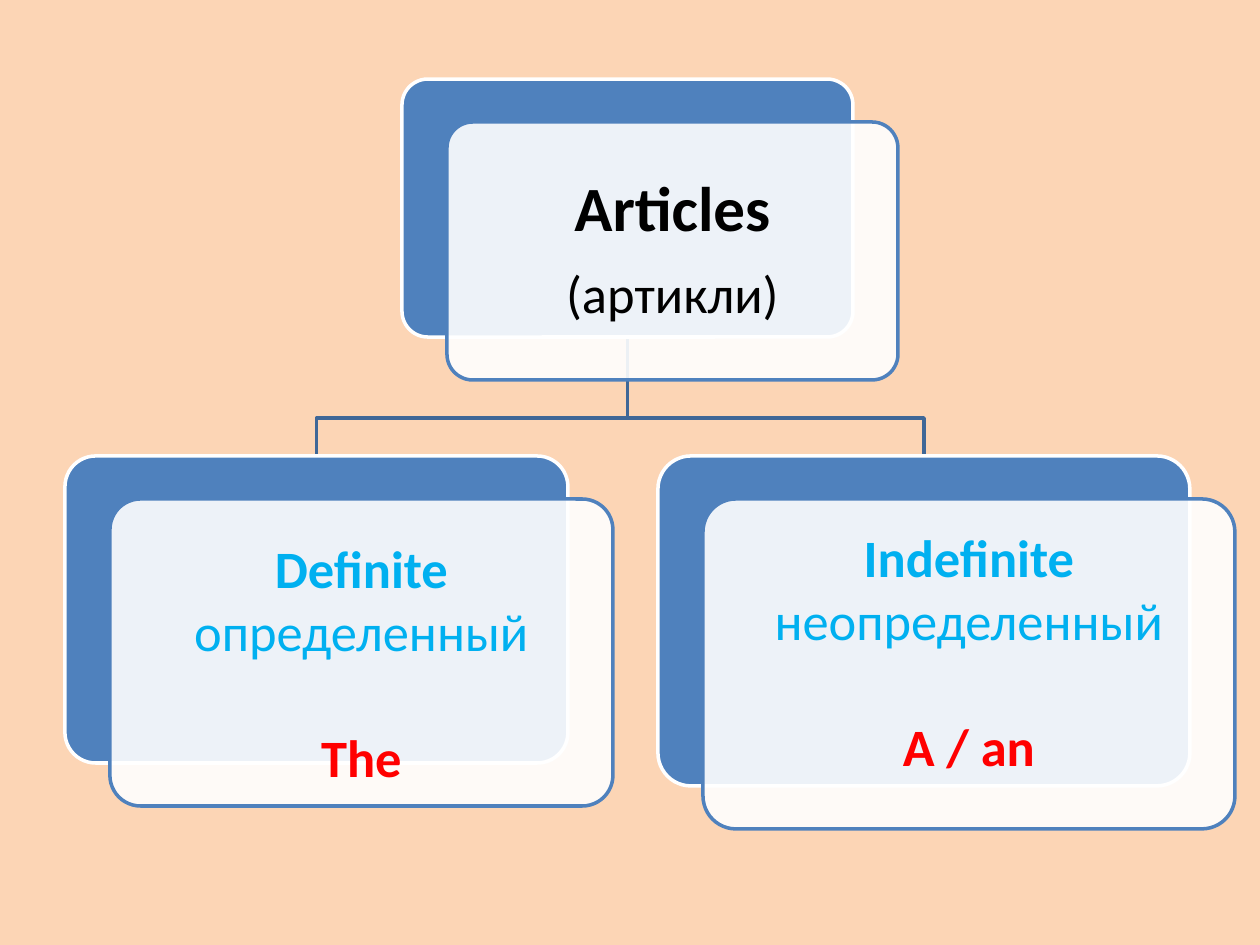
from collections import namedtuple

from lxml import etree
from pptx import Presentation
from pptx.dml.color import RGBColor
from pptx.enum.shapes import MSO_SHAPE
from pptx.enum.text import MSO_ANCHOR, PP_ALIGN
from pptx.oxml.ns import qn
from pptx.util import Pt

EMU_PER_PX = 914400 / 126
COLORS = {
    "background": "FCD5B5",
    "card": "4F81BD",
    "white": "FFFFFF",
    "branch": "3F6797",
    "title": "000000",
    "kind": "00B0F0",
    "article": "FF0000",
}
FRONT_SHIFT = (45, 43)
BRANCH_BEND_Y = 418

Box = namedtuple("Box", "left top width height")
Line = namedtuple("Line", "text color size bold gap_before", defaults=(0,))

ROOT = Box(402, 79, 451, 258)
DEFINITE = Box(65, 456, 503, 307)
INDEFINITE = Box(658, 456, 532, 330)


def px(length):
    return round(length * EMU_PER_PX)


def rgb(name):
    return RGBColor.from_string(COLORS[name])


def set_line(shape, color):
    shape.line.color.rgb = rgb(color)
    shape.line.width = Pt(2)
    shape.shadow.inherit = False


def add_branch(slide, parent, child):
    """Draw the bent line from the parent's bottom to the child's top."""
    parent_x = parent.left + parent.width / 2
    child_x = child.left + child.width / 2
    builder = slide.shapes.build_freeform(px(parent_x), px(parent.top + parent.height))
    bends = [(parent_x, BRANCH_BEND_Y), (child_x, BRANCH_BEND_Y), (child_x, child.top)]
    builder.add_line_segments([(px(x), px(y)) for x, y in bends], close=False)
    branch = builder.convert_to_shape()
    branch.fill.background()
    set_line(branch, "branch")


def add_panel(slide, box, fill, line):
    panel = slide.shapes.add_shape(MSO_SHAPE.ROUNDED_RECTANGLE, *map(px, box))
    panel.adjustments[0] = 0.1
    panel.fill.solid()
    panel.fill.fore_color.rgb = rgb(fill)
    set_line(panel, line)
    return panel


def set_opacity(shape, percent):
    color = shape.fill._xPr.find(qn("a:solidFill"))[0]
    etree.SubElement(color, qn("a:alpha")).set("val", str(percent * 1000))


def write_lines(frame, lines, anchor, top_inset, spacing):
    frame.word_wrap = True
    frame.vertical_anchor = anchor
    frame.margin_left = frame.margin_right = frame.margin_bottom = px(16)
    frame.margin_top = px(top_inset)
    for index, line in enumerate(lines):
        paragraph = frame.add_paragraph() if index else frame.paragraphs[0]
        paragraph.text = line.text
        paragraph.alignment = PP_ALIGN.CENTER
        paragraph.line_spacing = spacing
        paragraph.space_before = Pt(line.gap_before)
        paragraph.font.name = "Calibri"
        paragraph.font.size = Pt(line.size)
        paragraph.font.bold = line.bold
        paragraph.font.color.rgb = rgb(line.color)


def add_card(slide, box, lines, anchor=MSO_ANCHOR.TOP, top_inset=16, spacing=1.0):
    """Add a solid panel with a shifted, translucent text panel over it."""
    add_panel(slide, box, "card", "white")
    shift_x, shift_y = FRONT_SHIFT
    front_box = box._replace(left=box.left + shift_x, top=box.top + shift_y)
    front = add_panel(slide, front_box, "white", "card")
    set_opacity(front, 90)
    write_lines(front.text_frame, lines, anchor, top_inset, spacing)


def article_lines(name, translation, article):
    return [
        Line(name, "kind", 30, True),
        Line(translation, "kind", 30, False),
        Line(article, "article", 30, True, gap_before=36),
    ]


def main():
    presentation = Presentation()
    presentation.slide_width = px(1260)
    presentation.slide_height = px(945)
    slide = presentation.slides.add_slide(presentation.slide_layouts[6])
    slide.background.fill.solid()
    slide.background.fill.fore_color.rgb = rgb("background")

    for child in (INDEFINITE, DEFINITE):
        add_branch(slide, ROOT, child)

    root_lines = [
        Line("Articles", "title", 36, True),
        Line("(артикли)", "title", 30, False, gap_before=12.6),
    ]
    add_card(slide, ROOT, root_lines, MSO_ANCHOR.MIDDLE, spacing=0.9)
    add_card(slide, DEFINITE, article_lines("Definite", "определенный", "The"), top_inset=28)
    add_card(slide, INDEFINITE, article_lines("Indefinite", "неопределенный", "A / an"))

    presentation.save("out.pptx")


if __name__ == "__main__":
    main()
